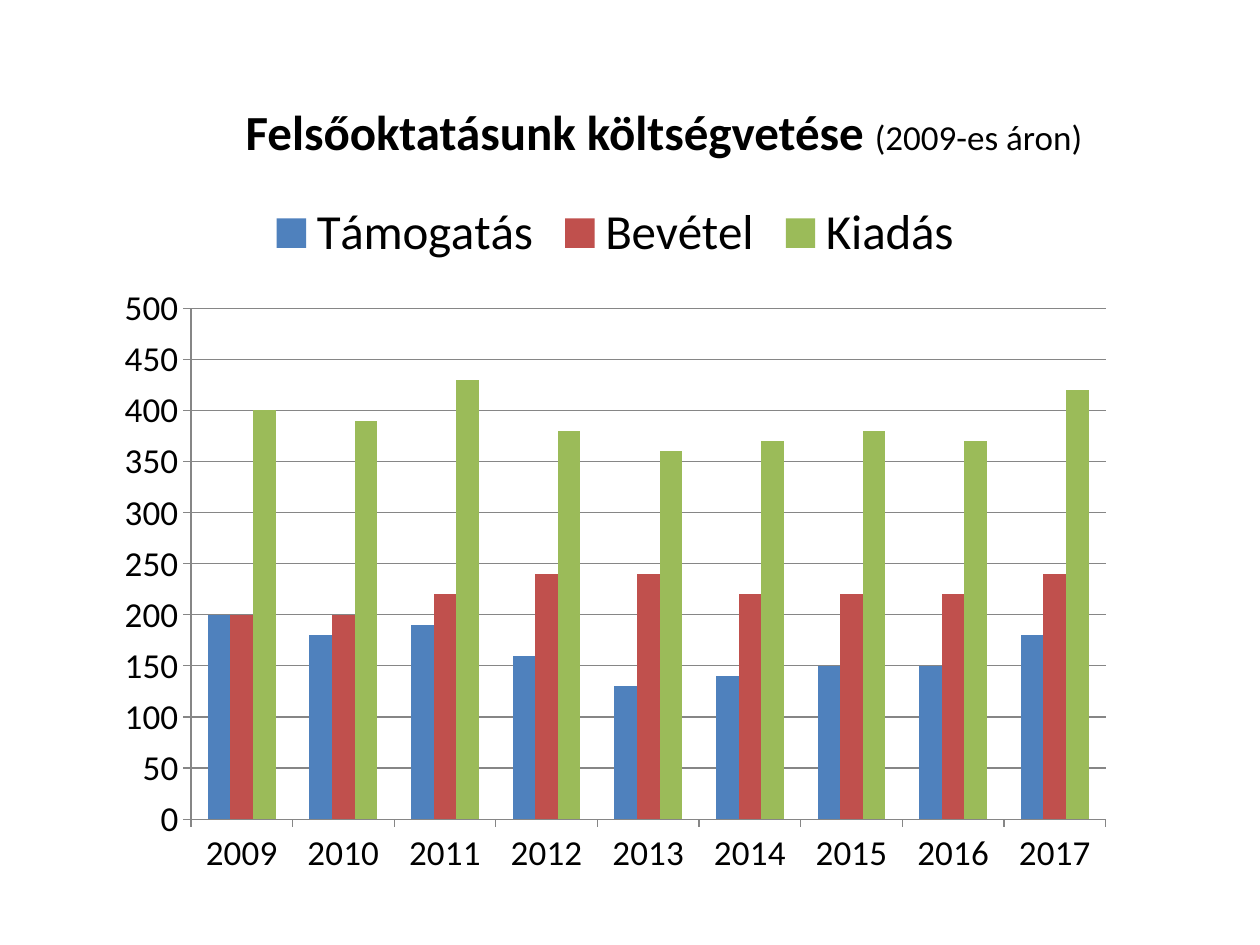
from dataclasses import dataclass

from pptx import Presentation
from pptx.chart.data import CategoryChartData
from pptx.dml.color import RGBColor
from pptx.enum.chart import XL_CHART_TYPE, XL_LEGEND_POSITION, XL_TICK_MARK
from pptx.enum.text import MSO_ANCHOR, PP_ALIGN
from pptx.util import Pt


@dataclass(frozen=True)
class Theme:
    font: str = "Calibri"
    text: RGBColor = RGBColor(0x00, 0x00, 0x00)
    line: RGBColor = RGBColor(0x86, 0x86, 0x86)
    support: RGBColor = RGBColor(0x4F, 0x81, 0xBD)
    revenue: RGBColor = RGBColor(0xC0, 0x50, 0x4D)
    spending: RGBColor = RGBColor(0x9B, 0xBB, 0x59)
    large: int = 28
    small: int = 20


THEME = Theme()
YEARS = [str(year) for year in range(2009, 2018)]
BUDGET = [
    ("Támogatás", THEME.support, (200, 180, 190, 160, 130, 140, 150, 150, 180)),
    ("Bevétel", THEME.revenue, (200, 200, 220, 240, 240, 220, 220, 220, 240)),
    ("Kiadás", THEME.spending, (400, 390, 430, 380, 360, 370, 380, 370, 420)),
]


def style_font(font, size, bold=False):
    font.name = THEME.font
    font.size = Pt(size)
    font.bold = bold
    font.color.rgb = THEME.text


def place_title(slide, left, top, width, height):
    title = slide.shapes.title
    title.left, title.top = Pt(left), Pt(top)
    title.width, title.height = Pt(width), Pt(height)
    frame = title.text_frame
    frame.word_wrap = False
    frame.vertical_anchor = MSO_ANCHOR.TOP
    heading = frame.paragraphs[0]
    heading.alignment = PP_ALIGN.LEFT
    for wording, size, bold in (
        ("Felsőoktatásunk költségvetése ", THEME.large, True),
        ("(2009-es áron)", THEME.small, False),
    ):
        run = heading.add_run()
        run.text = wording
        style_font(run.font, size, bold)


def style_axis(axis):
    axis.major_tick_mark = XL_TICK_MARK.OUTSIDE
    axis.minor_tick_mark = XL_TICK_MARK.NONE
    style_font(axis.tick_labels.font, THEME.small)
    axis.format.line.color.rgb = THEME.line
    axis.format.line.width = Pt(0.75)


def add_budget_chart(slide, left, top, width, height):
    budget = CategoryChartData()
    budget.categories = YEARS
    for name, _, amounts in BUDGET:
        budget.add_series(name, amounts)
    chart = slide.shapes.add_chart(
        XL_CHART_TYPE.COLUMN_CLUSTERED,
        Pt(left), Pt(top), Pt(width), Pt(height), budget,
    ).chart
    chart.has_title = False
    style_font(chart.font, THEME.small)

    chart.has_legend = True
    chart.legend.position = XL_LEGEND_POSITION.TOP
    chart.legend.include_in_layout = False
    style_font(chart.legend.font, THEME.large)

    style_axis(chart.category_axis)
    amount_axis = chart.value_axis
    style_axis(amount_axis)
    amount_axis.minimum_scale = 0
    amount_axis.maximum_scale = 500
    amount_axis.major_unit = 50
    amount_axis.has_major_gridlines = True
    grid = amount_axis.major_gridlines.format.line
    grid.color.rgb = THEME.line
    grid.width = Pt(0.75)

    plot = chart.plots[0]
    plot.gap_width = 150
    plot.overlap = 0
    plot.vary_by_categories = False
    for columns, (_, color, _) in zip(plot.series, BUDGET):
        columns.format.fill.solid()
        columns.format.fill.fore_color.rgb = color


def main():
    presentation = Presentation()
    presentation.slide_width, presentation.slide_height = Pt(720), Pt(540)
    slide = presentation.slides.add_slide(presentation.slide_layouts[5])
    add_budget_chart(slide, 59.5, 105.5, 584, 402.5)
    place_title(slide, 133.2, 54.6, 498.2, 41.2)
    presentation.save("out.pptx")


if __name__ == "__main__":
    main()
